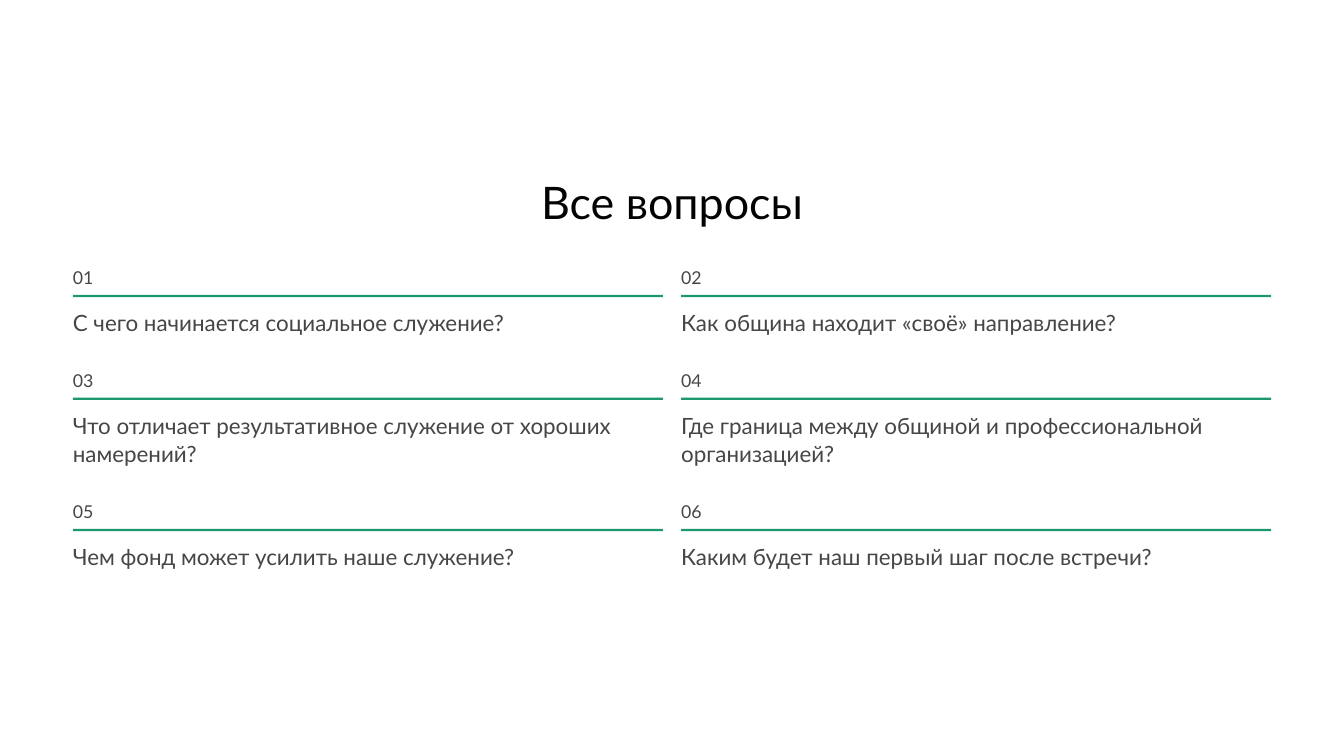
from pptx import Presentation
from pptx.dml.color import RGBColor
from pptx.enum.shapes import MSO_SHAPE
from pptx.enum.text import MSO_ANCHOR, MSO_AUTO_SIZE, PP_ALIGN
from pptx.util import Inches, Pt

RECTANGLE = MSO_SHAPE.RECTANGLE
TOP, MIDDLE = MSO_ANCHOR.TOP, MSO_ANCHOR.MIDDLE
LEFT, CENTER = PP_ALIGN.LEFT, PP_ALIGN.CENTER
NO_AUTOFIT = MSO_AUTO_SIZE.NONE

WHITE = RGBColor(0xFF, 0xFF, 0xFF)
INK = RGBColor(0x03, 0x03, 0x03)
GRAY = RGBColor(0x46, 0x46, 0x46)
GREEN = RGBColor(0x1C, 0x97, 0x70)

TITLE_ONLY = 5
MARGIN, COLUMN_PITCH, COLUMN_WIDTH = 5.42, 45.26, 43.9
FIRST_ROW, ROW_BASE, LINE_HEIGHT = 35.2, 9.85, 3.75
RULE_OFFSET, QUESTION_OFFSET = 3.8, 5.6

ROWS = [
    (1, ["С чего начинается социальное служение?",
         "Как община находит «своё» направление?"]),
    (2, ["Что отличает результативное служение от хороших намерений?",
         "Где граница между общиной и профессиональной организацией?"]),
    (1, ["Чем фонд может усилить наше служение?",
         "Каким будет наш первый шаг после встречи?"]),
]


def write(shape, text, size, color=GRAY, align=LEFT, anchor=TOP, spacing=1.0, wrap=True):
    """Put one formatted paragraph into a shape without insets."""
    frame = shape.text_frame
    frame.text = text
    frame.auto_size = NO_AUTOFIT
    frame.word_wrap = wrap
    frame.vertical_anchor = anchor
    frame.margin_left = frame.margin_right = 0
    frame.margin_top = frame.margin_bottom = 0
    paragraph = frame.paragraphs[0]
    paragraph.alignment = align
    paragraph.line_spacing = spacing
    font = paragraph.runs[0].font
    font.name, font.size, font.color.rgb = "Lato", Pt(size), color


class QuestionSlide:
    """Style and current slide, with positions in percent of the slide size."""

    def __init__(self, presentation):
        self.width = presentation.slide_width
        self.height = presentation.slide_height
        self.slide = presentation.slides.add_slide(presentation.slide_layouts[TITLE_ONLY])
        background = self.slide.background.fill
        background.solid()
        background.fore_color.rgb = WHITE

    def area(self, left, top, width, height):
        """Turn percentages into slide lengths."""
        return (int(self.width * left / 100), int(self.height * top / 100),
                int(self.width * width / 100), int(self.height * height / 100))

    def title(self, text):
        """Format and place the title placeholder."""
        shape = self.slide.shapes.title
        shape.left, shape.top, shape.width, shape.height = self.area(30.55, 22.8, 38.9, 7.4)
        write(shape, text, 24, color=INK, align=CENTER, spacing=1.04, wrap=False)

    def number(self, value, left, top):
        """Add a two-digit question number."""
        shape = self.slide.shapes.add_textbox(*self.area(left, top, 2.7, 3))
        write(shape, f"{value:02d}", 9.5, anchor=MIDDLE, wrap=False)

    def rule(self, left, top):
        """Add a thin green bar across a column."""
        shape = self.slide.shapes.add_shape(RECTANGLE, *self.area(left, top, COLUMN_WIDTH, 0.3))
        shape.shadow.inherit = False
        shape.fill.solid()
        shape.fill.fore_color.rgb = GREEN
        shape.line.fill.background()

    def question(self, text, left, top, lines):
        """Add the question text below its bar."""
        shape = self.slide.shapes.add_textbox(
            *self.area(left, top, COLUMN_WIDTH, LINE_HEIGHT * lines))
        write(shape, text, 12, spacing=1.04, wrap=lines > 1)


def main():
    """Build and save the slide."""
    presentation = Presentation()
    presentation.slide_width = Inches(10)
    presentation.slide_height = presentation.slide_width * 9 // 16
    page = QuestionSlide(presentation)
    page.title("Все вопросы")
    top = FIRST_ROW
    for row, (lines, questions) in enumerate(ROWS):
        for column, text in enumerate(questions):
            left = MARGIN + column * COLUMN_PITCH
            page.number(row * len(questions) + column + 1, left, top)
            page.rule(left, top + RULE_OFFSET)
            page.question(text, left, top + QUESTION_OFFSET, lines)
        top += ROW_BASE + LINE_HEIGHT * lines
    presentation.save("out.pptx")


if __name__ == "__main__":
    main()
